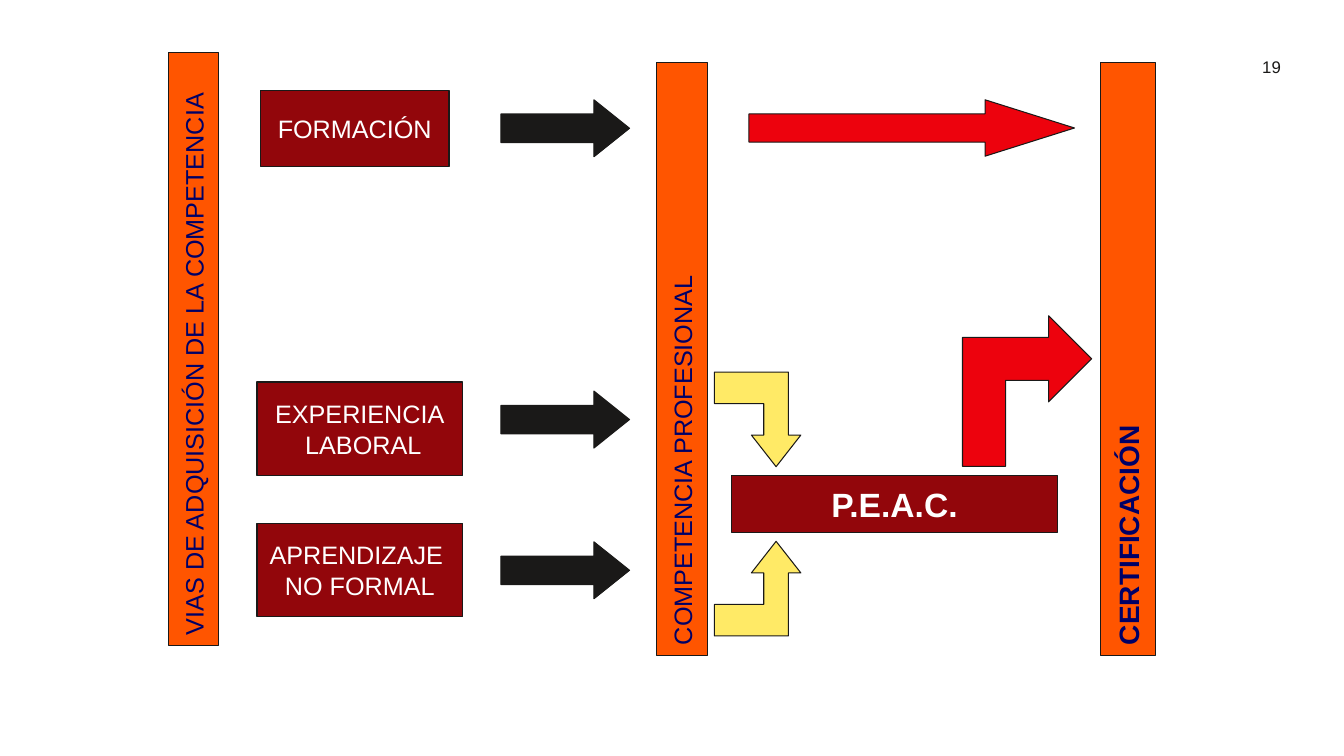
import pptx
import pptx.dml.color
import pptx.enum.shapes
import pptx.enum.text
import pptx.util

COLORS = {"ink": "1A1918", "orange": "FF5500", "navy": "000066", "maroon": "92060B",
          "white": "FFFFFF", "yellow": "FFEA66", "red": "ED020D"}
SHAPES = pptx.enum.shapes.MSO_SHAPE
ALIGN = pptx.enum.text.PP_ALIGN


def grid(steps):
    """Length of a number of grid columns or rows, each a tenth of an inch."""
    return pptx.util.Inches(steps / 10)


def color(name):
    return pptx.dml.color.RGBColor.from_string(COLORS[name])


def paint(shape, fill):
    shape.shadow.inherit = False
    shape.fill.solid()
    shape.fill.fore_color.rgb = color(fill)
    shape.line.color.rgb = color("ink")
    shape.line.width = pptx.util.Pt(0.75)


def add_preset(page, kind, area, fill):
    shape = page.shapes.add_shape(kind, *[grid(steps) for steps in area])
    paint(shape, fill)
    return shape


def write(box, lines, size, ink, bold=False, align=ALIGN.CENTER, wrap=False):
    frame = box.text_frame
    frame.word_wrap = wrap
    frame.vertical_anchor = pptx.enum.text.MSO_ANCHOR.MIDDLE
    for index, line in enumerate(lines):
        para = frame.add_paragraph() if index else frame.paragraphs[0]
        para.alignment = align
        span = para.add_run()
        span.text = line
        span.font.name = "Arial"
        span.font.size = pptx.util.Pt(size)
        span.font.bold = bold
        span.font.color.rgb = color(ink)


def add_bar(page, left, top, width, label, size=18, bold=False):
    """Tall bar whose label reads upwards from its foot."""
    bar = add_preset(page, SHAPES.RECTANGLE, (left, top, width, 58.8), "orange")
    write(bar, [label], size, "navy", bold, ALIGN.LEFT, wrap=True)
    frame = bar.text_frame
    frame.margin_left = frame.margin_right = grid(0.5)
    frame.margin_top = frame.margin_bottom = grid(1)
    frame._txBody.bodyPr.set("vert", "vert270")


def add_box(page, area, lines, size=18, bold=False):
    box = add_preset(page, SHAPES.RECTANGLE, area, "maroon")
    write(box, lines, size, "white", bold)


def add_arrow(page, area, fill, head):
    arrow = add_preset(page, SHAPES.RIGHT_ARROW, area, fill)
    arrow.adjustments[0] = 0.5
    arrow.adjustments[1] = head


def add_bent_arrow(page, tip, forward, side, fill):
    """Bent arrow: forward is the head's length, side its half width towards the tail."""
    outline = [(0, 0), (-1, 1), (-1, 0.5), (-2, 0.5), (-2, 2.5),
               (-3, 2.5), (-3, -0.5), (-1, -0.5), (-1, -1)]
    points = [tuple(grid(tip[axis] + along * forward[axis] + across * side[axis])
                    for axis in (0, 1)) for along, across in outline]
    builder = page.shapes.build_freeform(*points[0])
    builder.add_line_segments(points[1:], close=True)
    paint(builder.convert_to_shape(), fill)


def add_page_number(page, number):
    box = page.shapes.add_textbox(grid(124.6), grid(5.5), grid(3.1), grid(2.2))
    frame = box.text_frame
    frame.margin_left = frame.margin_right = 0
    frame.margin_top = frame.margin_bottom = 0
    write(box, [number], 12, "ink", wrap=True)


def main():
    deck = pptx.Presentation()
    deck.slide_width, deck.slide_height = grid(133.33), grid(75)
    page = deck.slides.add_slide(deck.slide_layouts[6])
    add_page_number(page, "19")

    # Stages of the process
    add_bar(page, 16.7, 5.2, 5, "VIAS DE ADQUISICIÓN DE LA COMPETENCIA")
    add_bar(page, 65.1, 6.2, 5.1, "COMPETENCIA PROFESIONAL")
    add_bar(page, 109.2, 6.2, 5.4, "CERTIFICACIÓN", 20, bold=True)

    # Ways of acquiring competence, and the procedure
    add_box(page, (25.85, 9, 18.7, 7.5), ["FORMACIÓN"])
    add_box(page, (25.5, 37.9, 20.4, 9.3), ["EXPERIENCIA", " LABORAL"])
    add_box(page, (25.5, 51.9, 20.4, 9.3), ["APRENDIZAJE ", "NO FORMAL"])
    add_box(page, (72.6, 47.2, 32.3, 5.6), ["P.E.A.C."], 24, bold=True)

    # Straight arrows
    for top in (9.9, 38.8, 53.75):
        add_arrow(page, (49.7, top, 12.75, 5.65), "ink", 0.625)
    add_arrow(page, (74.3, 9.9, 32.3, 5.6), "red", 1.585)

    # Bent arrows into and out of the procedure
    add_bent_arrow(page, (77, 46.3), (0, 3.13), (-2.45, 0), "yellow")
    add_bent_arrow(page, (77, 53.7), (0, -3.13), (-2.45, 0), "yellow")
    add_bent_arrow(page, (108.3, 35.6), (4.27, 0), (0, 4.27), "red")

    deck.save("out.pptx")


if __name__ == "__main__":
    main()
